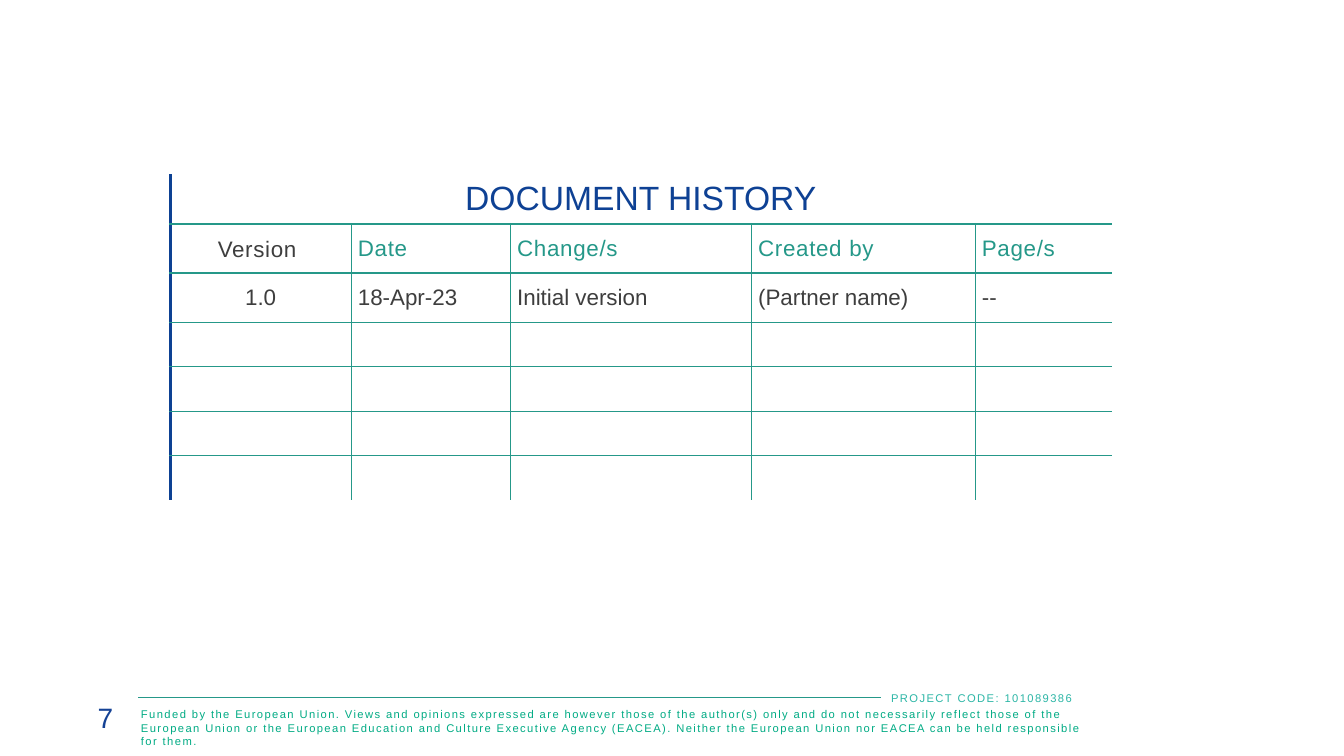
from dataclasses import dataclass

from lxml import etree
from pptx import Presentation
from pptx import util as u
from pptx.dml.color import RGBColor
from pptx.enum import shapes, text
from pptx.oxml import ns

TEAL, NAVY, DARK, WHITE = "259889", "0D4193", "3E3E3E", "FFFFFF"
LEFT, MID, RIGHT = text.PP_ALIGN.LEFT, text.PP_ALIGN.CENTER, text.PP_ALIGN.RIGHT


@dataclass
class Style:
    size: float
    color: str
    space: float = 0
    align: text.PP_ALIGN = LEFT


@dataclass
class Label:
    words: str
    left: float
    top: float
    width: float
    height: float
    style: Style


@dataclass
class Edge:
    color: str
    width: float


# Styles and content
TITLE = Style(24, "0E4194", align=MID)
FIRST = Style(16, DARK, 0.5)
HEAD = Style(16, TEAL, 0.5)
BODY = Style(16, DARK)
COUNT = Style(16, DARK, align=MID)

NOTE = (
    "Funded by the European Union. Views and opinions expressed are however those "
    "of the author(s) only and do not necessarily reflect those of the European Union "
    "or the European Education and Culture Executive Agency (EACEA). Neither the "
    "European Union nor EACEA can be held responsible for them."
)
FOOTER = [
    Label(NOTE, 1.3, 6.97, 9.58, 0.5, Style(8, "00AB84", 1)),
    Label("7", 0.27, 6.9, 0.95, 0.44, Style(20, "154295", align=RIGHT)),
]
CODE = Label("PROJECT CODE: 101089386", 8.74, 6.8, 2.23, 0.24, Style(8, "2CB6A6", 1))

COLS = [1.79, 1.58, 2.39, 2.22, 1.35]
ROWS = [0.49] * 3 + [0.44] * 4
HEADS = ["Version", "Date", "Change/s", "Created by", "Page/s"]
ENTRY = ["1.0", "18-Apr-23", "Initial version", "(Partner name)", "--"]

# Horizontal rules from the top of the table to its bottom
RULES = ([Edge(WHITE, 0.25)] + [Edge(TEAL, 1.5)] * 2
         + [Edge(TEAL, 0.5)] * 4 + [Edge(WHITE, 0.25)])
# Vertical rules from the left of the table to its right
POSTS = [Edge(NAVY, 2.25)] + [Edge(TEAL, 0.25)] * 4 + [Edge(WHITE, 1)]


def paint(code: str) -> RGBColor:
    return RGBColor.from_string(code)


def write(frame, words: str, style: Style):
    para = frame.paragraphs[0]
    para.alignment = style.align
    run = para.add_run()
    run.text = words
    run.font.name = "Arial"
    run.font.size = u.Pt(style.size)
    run.font.color.rgb = paint(style.color)
    if style.space:
        run._r.get_or_add_rPr().set("spc", str(int(style.space * 100)))
    return para


def fill_box(shape, label: Label):
    frame = shape.text_frame
    frame.word_wrap = True
    frame.auto_size = text.MSO_AUTO_SIZE.SHAPE_TO_FIT_TEXT
    frame.vertical_anchor = text.MSO_ANCHOR.TOP
    return write(frame, label.words, label.style)


def place(label: Label) -> tuple:
    return tuple(map(u.Inches, (label.left, label.top, label.width, label.height)))


def border(cell, edges: dict[str, Edge]) -> None:
    props = cell._tc.get_or_add_tcPr()
    for spot, (side, edge) in enumerate(edges.items()):
        line = etree.Element(ns.qn(f"a:ln{side}"), w=str(u.Pt(edge.width)))
        fill = etree.SubElement(line, ns.qn("a:solidFill"))
        etree.SubElement(fill, ns.qn("a:srgbClr"), val=edge.color)
        props.insert(spot, line)


def add_history(slide) -> None:
    frame = slide.shapes.add_table(
        len(ROWS), len(COLS), u.Inches(1.69), u.Inches(1.73),
        u.Inches(sum(COLS)), u.Inches(sum(ROWS)))
    table = frame.table
    table.first_row = table.horz_banding = False
    for col, width in zip(table.columns, COLS):
        col.width = u.Inches(width)
    for row, height in zip(table.rows, ROWS):
        row.height = u.Inches(height)

    # Cell look and borders
    for r in range(len(ROWS)):
        for c in range(len(COLS)):
            cell = table.cell(r, c)
            cell.fill.background()
            cell.vertical_anchor = text.MSO_ANCHOR.MIDDLE
            cell.margin_left = cell.margin_right = u.Inches(0.07)
            cell.margin_top = cell.margin_bottom = 0
            last = POSTS[-1] if r == 0 else POSTS[c + 1]
            border(cell, {"L": POSTS[c], "R": last,
                          "T": RULES[r], "B": RULES[r + 1]})

    # Cell text
    table.cell(0, 0).merge(table.cell(0, len(COLS) - 1))
    write(table.cell(0, 0).text_frame, "DOCUMENT HISTORY", TITLE)
    for c, (head, entry) in enumerate(zip(HEADS, ENTRY)):
        para = write(table.cell(1, c).text_frame, head, HEAD if c else FIRST)
        if c == 0:
            para.line_spacing = 1.07
            props = para._p.get_or_add_pPr()
            props.set("marL", str(u.Inches(0.2)))
            props.set("indent", str(u.Inches(0.2)))
        write(table.cell(2, c).text_frame, entry, BODY if c else COUNT)


def add_footer(slide) -> None:
    # Rule above the funding note
    rule = slide.shapes.add_connector(
        shapes.MSO_CONNECTOR.STRAIGHT, u.Inches(1.37), u.Inches(6.92),
        u.Inches(10.56), u.Inches(6.92))
    rule.line.color.rgb = paint(TEAL)
    rule.line.width = u.Pt(0.75)
    etree.SubElement(rule._element.spPr, ns.qn("a:effectLst"))

    # Funding note and page number
    for label in FOOTER:
        fill_box(slide.shapes.add_textbox(*place(label)), label)

    # Project code on a white plate over the rule
    plate = slide.shapes.add_shape(shapes.MSO_SHAPE.RECTANGLE, *place(CODE))
    plate.shadow.inherit = False
    plate.fill.solid()
    plate.fill.fore_color.rgb = paint(WHITE)
    plate.line.fill.background()
    para = fill_box(plate, CODE)
    para.line_spacing = 1.07
    para.space_after = u.Pt(6)


def main() -> None:
    deck = Presentation()
    deck.slide_width, deck.slide_height = u.Inches(13.33), u.Inches(7.5)
    slide = deck.slides.add_slide(deck.slide_layouts[6])
    add_footer(slide)
    add_history(slide)
    deck.save("out.pptx")


if __name__ == "__main__":
    main()
